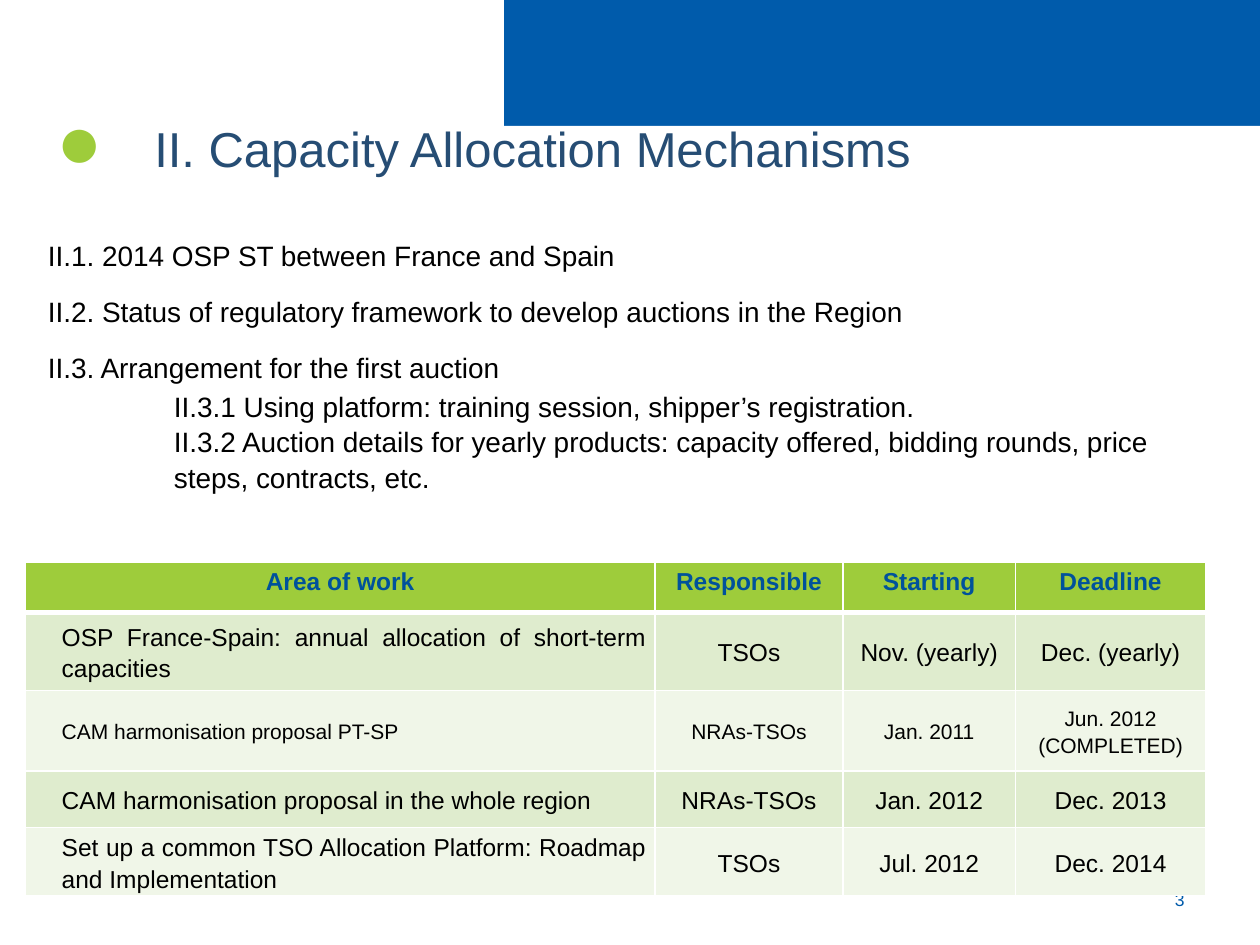
from pptx import Presentation
from pptx.dml.color import RGBColor
from pptx.enum.shapes import MSO_SHAPE
from pptx.enum.text import MSO_ANCHOR, MSO_AUTO_SIZE, PP_ALIGN
from pptx.oxml.ns import qn
from pptx.util import Inches, Pt
from lxml import etree

LEFT, CENTER, RIGHT, JUSTIFY = PP_ALIGN.LEFT, PP_ALIGN.CENTER, PP_ALIGN.RIGHT, PP_ALIGN.JUSTIFY
TOP, MIDDLE, BOTTOM = MSO_ANCHOR.TOP, MSO_ANCHOR.MIDDLE, MSO_ANCHOR.BOTTOM
BLUE, GREEN, NAVY, WHITE, BLACK = "005BAB", "9ECC3B", "264D74", "FFFFFF", "000000"
HEADER_TEXT, BANDS = "00529B", ("DFECCE", "F0F6E8")

TITLE = "II. Capacity Allocation Mechanisms"
AGENDA = [
    (1, "II.1. 2014 OSP ST between France and Spain"),
    (1, "II.2. Status of regulatory framework to develop auctions in the Region"),
    (1, "II.3. Arrangement for the first auction"),
    (2, "II.3.1 Using platform: training session, shipper’s registration."),
    (2, "II.3.2 Auction details for yearly products: capacity offered, bidding rounds, "
        "price steps, contracts, etc."),
]
AGENDA_FORMATS = {
    1: {"line": 1.25, "before": 6, "after": 2},
    2: {"line": 1.05, "margin": 1},
}
HEADERS = ["Area of work", "Responsible", "Starting", "Deadline"]
WORK = [  # text size, then the cells
    (14, ["OSP France-Spain: annual allocation of short-term capacities",
          "TSOs", "Nov. (yearly)", "Dec. (yearly)"]),
    (12, ["CAM harmonisation proposal PT-SP",
          "NRAs-TSOs", "Jan. 2011", "Jun. 2012 (COMPLETED)"]),
    (14, ["CAM harmonisation proposal in the whole region",
          "NRAs-TSOs", "Jan. 2012", "Dec. 2013"]),
    (14, ["Set up a common TSO Allocation Platform: Roadmap and Implementation",
          "TSOs", "Jul. 2012", "Dec. 2014"]),
]
COLUMN_WIDTHS = [5, 1.49, 1.37, 1.51]
ROW_HEIGHTS = [0.4, 0.62, 0.64, 0.45, 0.54]
WAVE = [  # Bezier curves, from the right edge to the left
    [(10, 0.61), (5.1, 0.94), (2.76, 0.21), (1.31, 0.21)],
    [(1.31, 0.21), (0.23, 0.21), (0.03, 0.79), (0, 1.1)],
]
CURVE_STEPS = 40


def color(value):
    return RGBColor.from_string(value)


def write(frame, text, size=14, fill=BLACK, bold=False, align=LEFT, line=None,
          before=0, after=0, margin=0, indent=0, level=0, first=True):
    """Write one paragraph; the first one reuses the paragraph already there."""
    para = frame.paragraphs[0] if first else frame.add_paragraph()
    para.level = level
    para.alignment = align
    para.line_spacing = line
    para.space_before = Pt(0 if first else before)
    para.space_after = Pt(after)
    properties = para._p.get_or_add_pPr()
    properties.set("marL", str(Inches(margin)))
    properties.set("indent", str(Inches(indent)))
    etree.SubElement(properties, qn("a:buNone"))
    span = para.add_run()
    span.text = text
    font = span.font
    font.name, font.size, font.bold = "Arial", Pt(size), bold
    font.color.rgb = color(fill)


def place(box, left, top, width, height, anchor):
    box.left, box.top = Inches(left), Inches(top)
    box.width, box.height = Inches(width), Inches(height)
    frame = box.text_frame
    frame.word_wrap = True
    frame.auto_size = MSO_AUTO_SIZE.NONE
    frame.vertical_anchor = anchor
    return frame


def paint(shape, fill):
    shape.shadow.inherit = False
    shape.fill.solid()
    shape.fill.fore_color.rgb = color(fill)
    shape.line.fill.background()


def curve_points(curve):
    for step in range(CURVE_STEPS + 1):
        t = step / CURVE_STEPS
        weights = ((1 - t) ** 3, 3 * t * (1 - t) ** 2, 3 * t * t * (1 - t), t ** 3)
        yield tuple(sum(w * point[axis] for w, point in zip(weights, curve))
                    for axis in (0, 1))


def add_banner(page):
    banner = page.shapes.add_shape(MSO_SHAPE.RECTANGLE, 0, 0, Inches(10), Inches(1.15))
    paint(banner, BLUE)
    points = [point for curve in WAVE for point in curve_points(curve)]
    points += [(0, 7.5), (10, 7.5)]
    builder = page.shapes.build_freeform(*points[0], scale=Inches(1))
    builder.add_line_segments(points[1:], close=True)
    paint(builder.convert_to_shape(), WHITE)


def format_cell(cell, fill, bottom_width):
    properties = cell._tc.get_or_add_tcPr()
    for side, width in (("L", 1), ("R", 1), ("T", 1), ("B", bottom_width)):
        border = etree.SubElement(properties, qn("a:ln" + side), w=str(Pt(width)))
        solid = etree.SubElement(border, qn("a:solidFill"))
        etree.SubElement(solid, qn("a:srgbClr"), val=WHITE)
    cell.fill.solid()
    cell.fill.fore_color.rgb = color(fill)


def add_work_table(page):
    table = page.shapes.add_table(
        len(ROW_HEIGHTS), len(COLUMN_WIDTHS), Inches(0.2), Inches(4.46),
        Inches(sum(COLUMN_WIDTHS)), Inches(sum(ROW_HEIGHTS))).table
    for column, width in zip(table.columns, COLUMN_WIDTHS):
        column.width = Inches(width)
    for row, height in zip(table.rows, ROW_HEIGHTS):
        row.height = Inches(height)
    for index, text in enumerate(HEADERS):
        cell = table.cell(0, index)
        format_cell(cell, GREEN, 3)
        write(cell.text_frame, text, fill=HEADER_TEXT, bold=True, align=CENTER)
    for row, (size, texts) in enumerate(WORK, start=1):
        for index, text in enumerate(texts):
            cell = table.cell(row, index)
            format_cell(cell, BANDS[(row - 1) % 2], 1)
            cell.vertical_anchor = MIDDLE
            cell.margin_left = cell.margin_right = Inches(0.07)
            cell.margin_top = cell.margin_bottom = 0
            is_area = index == 0
            write(cell.text_frame, text, size=size, line=1.15,
                  align=JUSTIFY if is_area else CENTER, margin=0.22 if is_area else 0)


def main():
    deck = Presentation()
    deck.slide_width, deck.slide_height = Inches(10), Inches(7.5)
    page = deck.slides.add_slide(deck.slide_layouts[1])
    title, body = page.placeholders
    tree = page.shapes.element

    add_banner(page)
    number = page.shapes.add_textbox(0, 0, 0, 0)
    write(place(number, 8.94, 6.94, 0.56, 0.4, MIDDLE), "3",
          size=10, fill=BLUE, align=RIGHT)
    dot = page.shapes.add_textbox(0, 0, 0, 0)
    write(place(dot, 0.35, 0.57, 0.55, 0.94, BOTTOM), "●",
          size=44, fill=GREEN, align=CENTER, margin=0.39, indent=-0.39)

    tree.append(title.element)  # bring in front of the banner
    write(place(title, -0.2, 0.8, 8.75, 0.67, TOP), TITLE, size=28, fill=NAVY,
          align=CENTER, line=1.2, after=2, margin=0.39, indent=-0.29)
    add_work_table(page)

    tree.append(body.element)
    frame = place(body, 0.28, 1.78, 9.2, 2.13, TOP)
    for index, (level, text) in enumerate(AGENDA):
        write(frame, text, size=16, level=level, first=index == 0,
              **AGENDA_FORMATS[level])
    deck.save("out.pptx")


if __name__ == "__main__":
    main()
